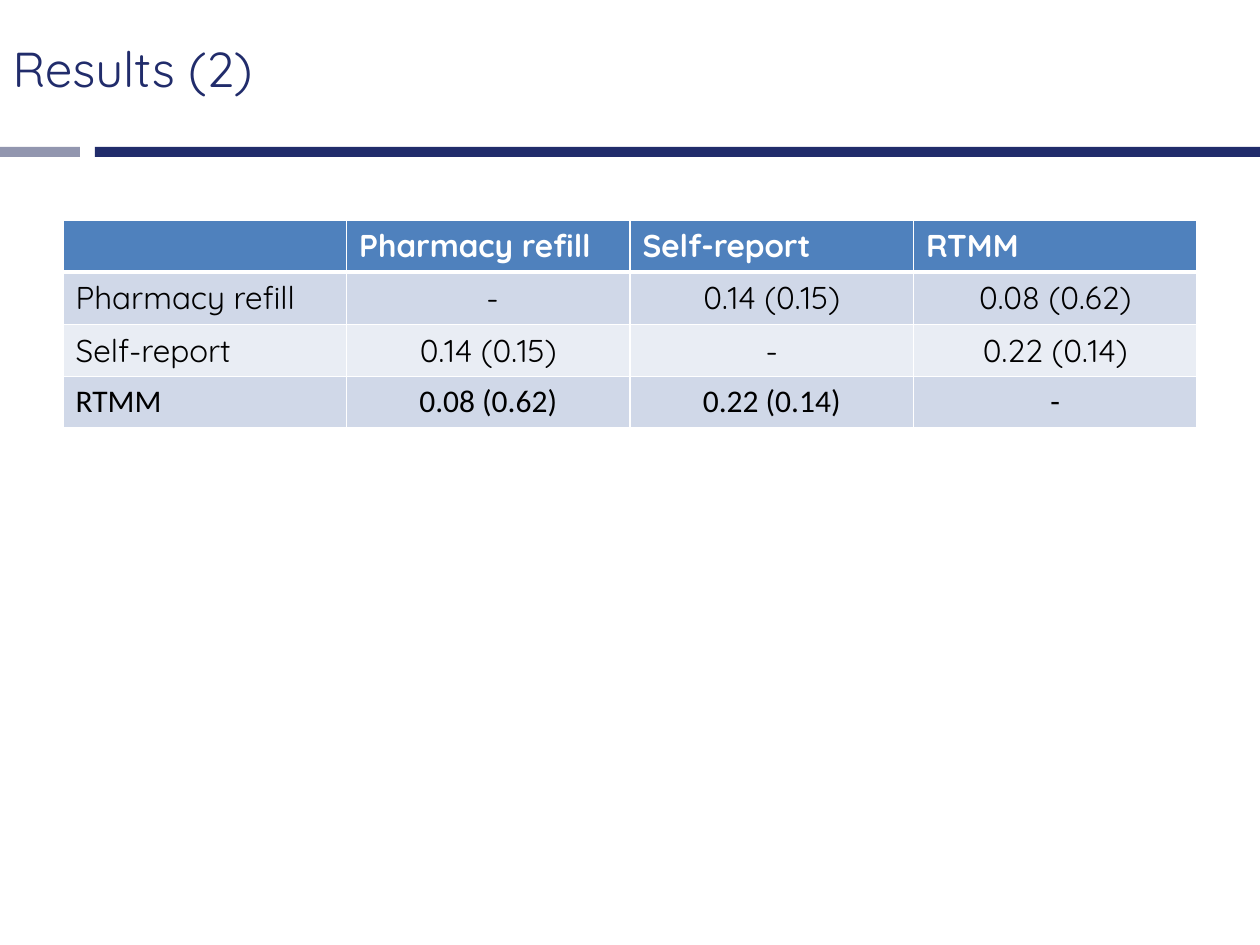
"""Build the results slide with its table of correlations."""
from lxml import etree
from pptx import Presentation
from pptx.dml.color import RGBColor
from pptx.enum.shapes import MSO_SHAPE
from pptx.enum.text import MSO_ANCHOR, PP_ALIGN
from pptx.oxml.ns import qn
from pptx.util import Pt

RECT = MSO_SHAPE.RECTANGLE
MIDDLE = MSO_ANCHOR.MIDDLE
LEFT, CENTER = PP_ALIGN.LEFT, PP_ALIGN.CENTER
NAVY = RGBColor(0x21, 0x2C, 0x6B)
GREY = RGBColor(0x92, 0x96, 0xAF)
BLUE = RGBColor(0x4F, 0x81, 0xBD)
DARK = RGBColor(0xD0, 0xD8, 0xE8)
PALE = RGBColor(0xE9, 0xED, 0xF4)
WHITE = RGBColor(0xFF, 0xFF, 0xFF)
BLACK = RGBColor(0, 0, 0)
ROWS = [
    ["", "Pharmacy refill", "Self-report", "RTMM"],
    ["Pharmacy refill", " -", "0.14 (0.15)", "0.08 (0.62)"],
    ["Self-report", "0.14 (0.15)", "-", "0.22 (0.14)"],
    ["RTMM", "0.08 (0.62)", "0.22 (0.14)", "-"],
]
FILLS = [BLUE, DARK, PALE, DARK]


def px(*nums):
    return [round(n * 914400 / 126) for n in nums]


def edge(cell, side, width):
    props = cell._tc.get_or_add_tcPr()
    line = etree.SubElement(props, qn("a:ln" + side), w=str(Pt(width)))
    fill = etree.SubElement(line, qn("a:solidFill"))
    etree.SubElement(fill, qn("a:srgbClr"), val=str(WHITE))


prs = Presentation()
prs.slide_width, prs.slide_height = px(1260, 945)
slide = prs.slides.add_slide(prs.slide_layouts[5])

for left, width, color in [(95, 1165, NAVY), (0, 80, GREY)]:
    bar = slide.shapes.add_shape(RECT, *px(left, 147, width, 10))
    bar.shadow.inherit = False
    bar.fill.solid()
    bar.fill.fore_color.rgb = color
    bar.line.fill.background()

title = slide.shapes.title
title.left, title.top, title.width, title.height = px(0, 0, 955, 136)
title.text_frame.text = "Results (2)"
title.text_frame.vertical_anchor = MIDDLE
para = title.text_frame.paragraphs[0]
para.alignment = LEFT
para.font.name = "Quicksand"
para.font.size = Pt(28)
para.font.color.rgb = NAVY

frame = slide.shapes.add_table(4, 4, *px(63, 220, 1134, 204))
for r, row in enumerate(ROWS):
    for c, text in enumerate(row):
        cell = frame.table.cell(r, c)
        for side in "LRTB":
            heavy = (r, side) in [(0, "B"), (1, "T")]
            edge(cell, side, 3 if heavy else 1)
        cell.fill.solid()
        cell.fill.fore_color.rgb = FILLS[r]
        cell.text = text
        para = cell.text_frame.paragraphs[0]
        para.alignment = CENTER if r and c else LEFT
        para.font.name = "Calibri" if r == 3 else "Quicksand"
        para.font.size = Pt(18)
        para.font.bold = r == 0
        para.font.color.rgb = BLACK if r else WHITE

prs.save("out.pptx")
